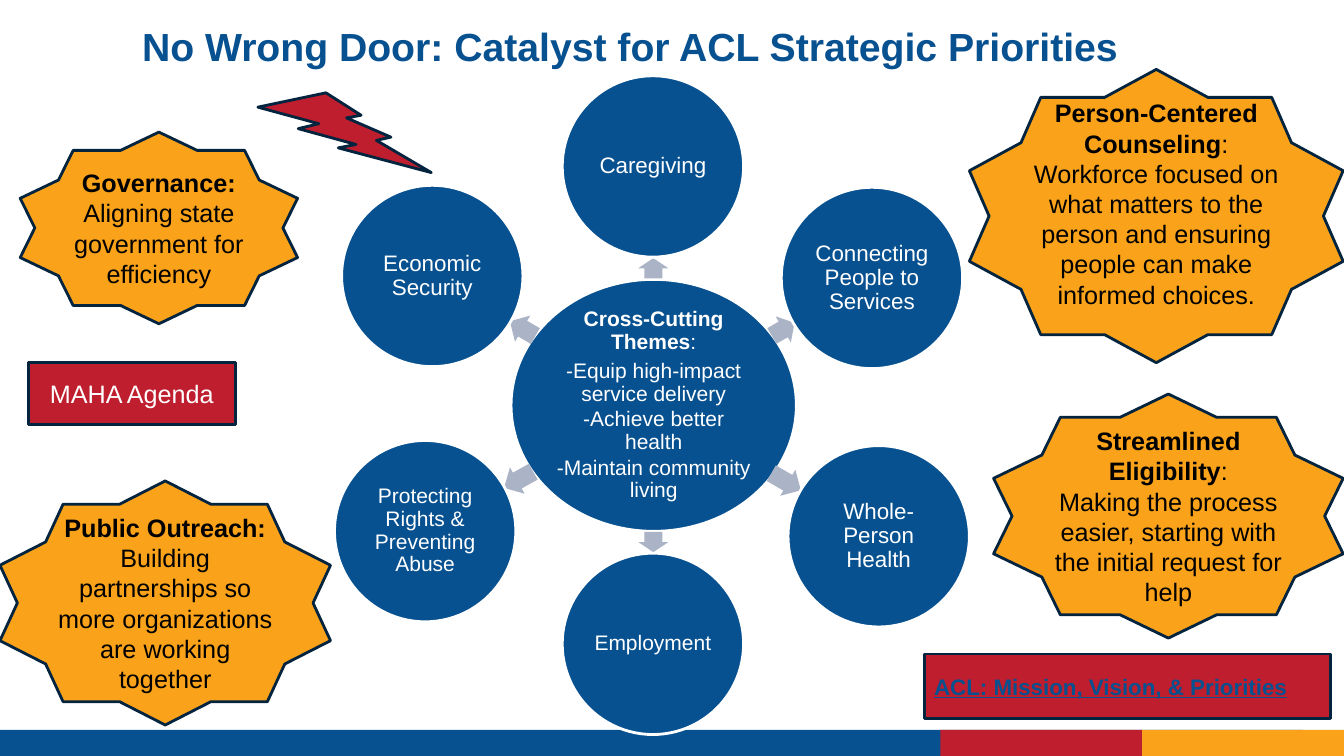
from pptx import Presentation
from pptx.dml.color import RGBColor
from pptx.enum.shapes import MSO_SHAPE
from pptx.enum.text import MSO_ANCHOR, PP_ALIGN
from pptx.util import Cm, Pt

RECT, OVAL = MSO_SHAPE.RECTANGLE, MSO_SHAPE.OVAL
STAR, BOLT = MSO_SHAPE.STAR_10_POINT, MSO_SHAPE.LIGHTNING_BOLT
ARROW = MSO_SHAPE.RIGHT_ARROW
MIDDLE = MSO_ANCHOR.MIDDLE
LEFT, CENTER = PP_ALIGN.LEFT, PP_ALIGN.CENTER

BLUE, RED, GOLD, NAVY = "075190", "BE1E2D", "F9A21A", "03243F"
GREY, WHITE, BLACK = "ABB3C6", "FFFFFF", "000000"


def rgb(value):
    return RGBColor.from_string(value)


class Deck:
    font = "Arial"
    line_width = Pt(2)
    circle_size = 4.57
    circle_inset = Cm(0.05)

    def __init__(self, slide):
        self.s = slide

    def shape(self, kind, x, y, w, h, fill, line=None):
        sp = self.s.shapes.add_shape(kind, Cm(x), Cm(y), Cm(w), Cm(h))
        sp.shadow.inherit = False
        sp.fill.solid()
        sp.fill.fore_color.rgb = rgb(fill)
        if line:
            sp.line.color.rgb = rgb(line)
            sp.line.width = self.line_width
        else:
            sp.line.fill.background()
        return sp

    def add_text(self, sp, paragraphs, size, color, align=CENTER, spacing=None):
        """Each paragraph is a (bold text, plain text) pair."""
        tf = sp.text_frame
        tf.word_wrap = True
        tf.vertical_anchor = MIDDLE
        for i, parts in enumerate(paragraphs):
            p = tf.paragraphs[0] if i == 0 else tf.add_paragraph()
            p.alignment = align
            if spacing:
                p.line_spacing = spacing
            for text, bold in zip(parts, (True, False)):
                if text:
                    r = p.add_run()
                    r.text = text
                    r.font.name = self.font
                    r.font.size = Pt(size)
                    r.font.bold = bold
                    r.font.color.rgb = rgb(color)
        return tf

    def title(self, x, y, w, h, text):
        sp = self.s.shapes.add_textbox(Cm(x), Cm(y), Cm(w), Cm(h))
        self.add_text(sp, [(text, "")], 28, BLUE, LEFT, 0.9)

    def star(self, x, y, w, h, paragraphs):
        sp = self.shape(STAR, x, y, w, h, GOLD, NAVY)
        return self.add_text(sp, paragraphs, 18, BLACK)

    def box(self, x, y, w, h, parts, size, color, align):
        sp = self.shape(RECT, x, y, w, h, RED, NAVY)
        return self.add_text(sp, [parts], size, color, align)

    def oval(self, x, y, w, h, paragraphs, size):
        sp = self.shape(OVAL, x, y, w, h, BLUE, WHITE)
        tf = self.add_text(sp, paragraphs, size, WHITE, spacing=0.9)
        tf.margin_left = tf.margin_right = self.circle_inset
        tf.margin_top = tf.margin_bottom = self.circle_inset
        return tf

    def circle(self, x, y, text, size):
        self.oval(x, y, self.circle_size, self.circle_size, [("", text)], size)

    def arrow(self, x, y, w, angle):
        sp = self.shape(ARROW, x, y, w, 0.76, GREY)
        sp.adjustments[0], sp.adjustments[1] = 0.6, 0.5
        sp.rotation = angle


def main():
    prs = Presentation()
    prs.slide_width, prs.slide_height = Cm(33.87), Cm(19.05)
    d = Deck(prs.slides.add_slide(prs.slide_layouts[6]))

    # Footer bands
    for x, w, color in ((0, 32.84, BLUE), (28.78, 5.09, GOLD), (23.7, 5.08, RED)):
        d.shape(RECT, x, 18.39, w, 0.66, color)

    d.title(3.33, 0.13, 30.54, 2.21,
            "No Wrong Door: Catalyst for ACL Strategic Priorities")

    # Left side
    d.star(0.51, 3.33, 6.99, 4.83,
           [("Governance:", " Aligning state government for efficiency")])
    d.box(0.71, 9.14, 5.23, 1.55, ("", "MAHA Agenda"), 18, WHITE, CENTER)
    d.star(0, 12.12, 8.33, 6.15,
           [("Public Outreach: ",
             "Building partnerships so more organizations are working together")])

    # Hub with the cross-cutting themes
    tf = d.oval(12.88, 7.04, 7.19, 6.35,
                [("Cross-Cutting Themes", ":"),
                 ("", "-Equip high-impact service delivery"),
                 ("", "-Achieve better health"),
                 ("", "-Maintain community living")], 15)
    for p, gap in zip(tf.paragraphs, (5, 2, 2, 2)):
        p.space_after = Pt(gap)

    # Priorities around the hub, each with its arrow: x, y, width, angle
    priorities = (
        ((16.21, 6.38, 0.51, 270), 14.17, 1.91, "Caregiving", 16),
        ((19.41, 7.92, 0.66, 329.8), 19.69, 4.72, "Connecting People to Services", 16),
        ((19.38, 11.76, 0.86, 30), 19.86, 11.23, "Whole-Person Health", 16),
        ((16.21, 13.28, 0.51, 90), 14.17, 13.94, "Employment", 15),
        ((12.65, 11.71, 0.84, 150.9), 8.43, 11.1,
         "Protecting Rights & Preventing Abuse", 15),
        ((12.8, 7.9, 0.74, 210.3), 8.61, 4.67, "Economic Security", 16),
    )
    for arrow, x, y, text, size in priorities:
        d.arrow(*arrow)
        d.circle(x, y, text, size)

    # Right side
    tf = d.star(24.43, 1.75, 9.42, 7.39,
                [("Person-Centered Counseling",
                  ": Workforce focused on what matters to the person "
                  "and ensuring people can make informed choices.")])
    tf.margin_bottom = Cm(0.76)
    d.star(25.04, 9.93, 8.81, 6.15,
           [("Streamlined Eligibility", ":"),
            ("", "Making the process easier, starting with the initial request for help")])

    d.shape(BOLT, 6.5, 2.34, 4.37, 2.01, RED, NAVY)
    tf = d.box(23.29, 16.48, 10.24, 1.63,
               ("ACL: Mission, Vision, & Priorities", ""), 16, BLUE, LEFT)
    tf.paragraphs[0].runs[0].font.underline = True

    prs.save("out.pptx")


if __name__ == "__main__":
    main()
